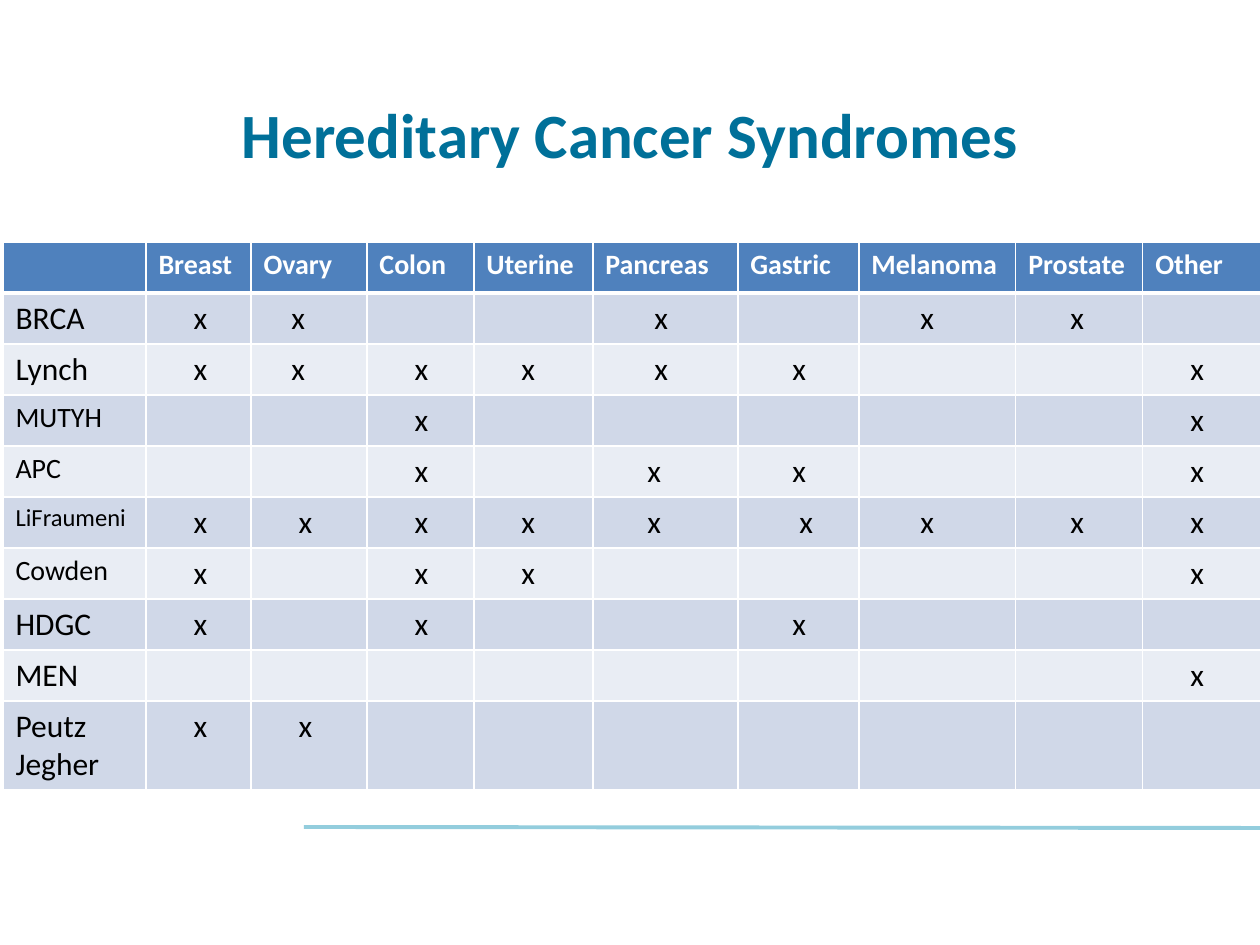
from lxml.etree import SubElement
from pptx import Presentation
from pptx.dml.color import RGBColor
from pptx.enum.shapes import MSO_CONNECTOR as Line
from pptx.enum.text import MSO_ANCHOR as Anchor, PP_ALIGN as Align
from pptx.oxml.ns import qn
from pptx.util import Emu, Pt

TEAL = RGBColor(0x00, 0x70, 0x99)
SKY = RGBColor(0x93, 0xCD, 0xDD)
BLUE = RGBColor(0x4F, 0x81, 0xBD)
BANDS = [RGBColor(0xE9, 0xED, 0xF4), RGBColor(0xD0, 0xD8, 0xE8)]
WHITE = RGBColor(0xFF, 0xFF, 0xFF)
BLACK = RGBColor(0x00, 0x00, 0x00)

SCALE = 914400 / 126
STEP = 7  # px of indent per unit in the mark rows

SITES = ["", "Breast", "Ovary", "Colon", "Uterine", "Pancreas",
         "Gastric", "Melanoma", "Prostate", "Other"]
# Name, size, and one sign per site: the indent of its x, or a dot for none
ROWS = [
    ("BRCA", 18, "54..7.76."),
    ("Lynch", 18, "545576..5"),
    ("MUTYH", 16, "..5.....5"),
    ("APC", 16, "..5.66..5"),
    ("LiFraumeni", 14, "555567765"),
    ("Cowden", 16, "5.55....5"),
    ("HDGC", 18, "5.5..6..."),
    ("MEN", 18, "........5"),
    ("Peutz\nJegher", 18, "55......."),
]
WIDTHS = [143, 105, 116, 107, 119, 145, 121, 157, 127, 120]
HEIGHTS = [51] * 9 + [89]


def px(n):
    return Emu(round(n * SCALE))


def style(frame, size, color, bold=False):
    for para in frame.paragraphs:
        for item in [para, *para.runs]:
            font = item.font
            font.name, font.size, font.bold = "Calibri", Pt(size), bold
            font.color.rgb = color


deck = Presentation()
deck.slide_width, deck.slide_height = px(1260), px(945)
slide = deck.slides.add_slide(deck.slide_layouts[6])
shapes = slide.shapes

rule = shapes.add_connector(Line.STRAIGHT, px(1260), px(828), px(304), px(827))
rule.line.color.rgb = SKY
rule.line.width = Pt(2.25)
SubElement(rule._element.spPr, qn("a:effectLst"))

title = shapes.add_textbox(px(63), px(77), px(1134), px(113)).text_frame
title.word_wrap = True
title.vertical_anchor = Anchor.MIDDLE
title.text = "Hereditary Cancer Syndromes"
title.paragraphs[0].alignment = Align.CENTER
style(title, 36, TEAL, True)

table = shapes.add_table(len(HEIGHTS), len(WIDTHS), px(3), px(242),
                         px(sum(WIDTHS)), px(sum(HEIGHTS))).table
for col, width in zip(table.columns, WIDTHS):
    col.width = px(width)
for row, height in zip(table.rows, HEIGHTS):
    row.height = px(height)

for r, row in enumerate(table.rows):
    for c, cell in enumerate(row.cells):
        # Borders come before the fill in the cell's properties
        props = cell._tc.get_or_add_tcPr()
        for side in "LRTB":
            thick = (r, side) in [(0, "B"), (1, "T")]
            edge = SubElement(props, qn(f"a:ln{side}"), w=str(Pt(3 if thick else 1)))
            paint = SubElement(edge, qn("a:solidFill"))
            SubElement(paint, qn("a:srgbClr"), val=str(WHITE))
        cell.fill.solid()
        cell.fill.fore_color.rgb = BANDS[r % 2] if r else BLUE

        frame = cell.text_frame
        if r == 0:
            frame.text = SITES[c]
            style(frame, 16, WHITE, True)
            continue
        name, size, marks = ROWS[r - 1]
        if c == 0:
            frame.text = name
            style(frame, size, BLACK)
            continue
        mark = marks[c - 1]
        if mark != ".":
            frame.text = "x"
            inset = px(int(mark) * STEP)
            frame.paragraphs[0]._p.get_or_add_pPr().set("marL", str(inset))
        style(frame, 18, BLACK)

deck.save("out.pptx")
